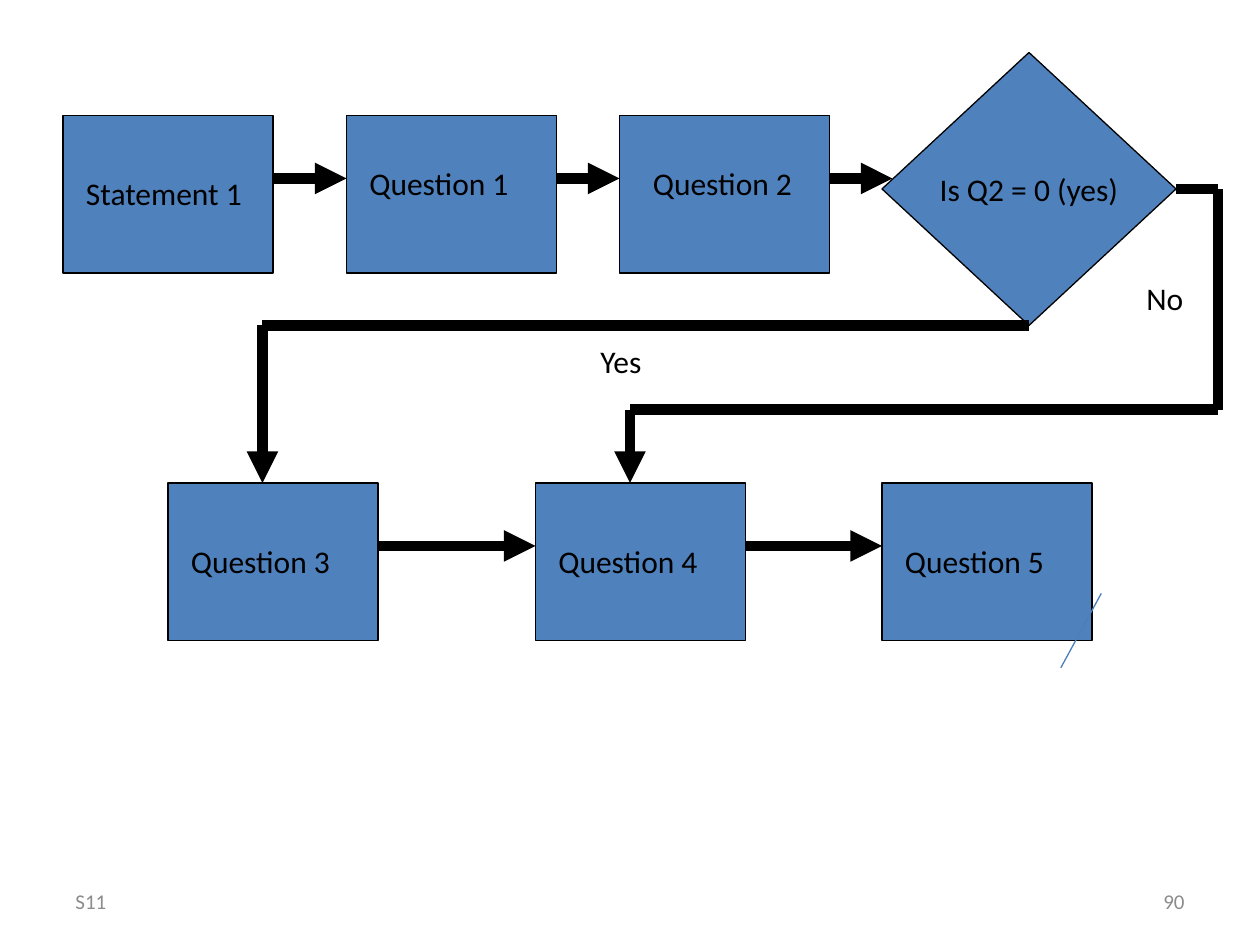
"""Build the survey skip-logic flow chart slide."""
from lxml import etree
from pptx import Presentation
from pptx.dml.color import RGBColor
from pptx.enum.shapes import MSO_CONNECTOR, MSO_SHAPE
from pptx.enum.text import MSO_ANCHOR, PP_ALIGN
from pptx.oxml.ns import qn
from pptx.util import Pt

RECT, DIAMOND = MSO_SHAPE.RECTANGLE, MSO_SHAPE.DIAMOND
LINE = MSO_CONNECTOR.STRAIGHT
LEFT, MID, RIGHT = PP_ALIGN.LEFT, PP_ALIGN.CENTER, PP_ALIGN.RIGHT
MIDDLE, TOP = MSO_ANCHOR.MIDDLE, MSO_ANCHOR.TOP


def paint(target, color):
    target.rgb = RGBColor.from_string(color)


def write(shape, text, size=18, color="000000", align=LEFT, anchor=TOP, wrap=False):
    frame = shape.text_frame
    frame.word_wrap = wrap
    frame.vertical_anchor = anchor
    para = frame.paragraphs[0]
    para.alignment = align
    run = para.add_run()
    run.text = text
    run.font.name = "Calibri"
    run.font.size = Pt(size)
    paint(run.font.color, color)


deck = Presentation()
deck.slide_width, deck.slide_height = Pt(720), Pt(540)
slide = deck.slides.add_slide(deck.slide_layouts[6])
shapes = slide.shapes

row1, row2, wide, high = 66, 276, 120, 90
nodes = [(RECT, x, row1, wide, high) for x in (36, 198, 354)]
nodes += [(RECT, x, row2, wide, high) for x in (96, 306, 504)]
nodes.append((DIAMOND, 504, 30, 168, 156))
for kind, *place in nodes:
    node = shapes.add_shape(kind, *map(Pt, place))
    node.shadow.inherit = False
    node.fill.solid()
    paint(node.fill.fore_color, "4F81BD")
    paint(node.line.color, "000000")
    node.line.width = Pt(0.75)
write(node, "Is Q2 = 0 (yes)", align=MID, anchor=MIDDLE)

labels = [
    ("Statement 1", 42, 96, 112),
    ("Question 1", 204, 90, 101.5),
    ("Question 2", 366, 90, 101.5),
    ("Question 3", 102, 306, 101.5),
    ("Question 4", 312, 306, 101.5),
    ("Question 5", 510, 306, 101.5),
    ("Yes", 336, 192, 45),
    ("No", 648, 156, 37.5),
]
for text, x, y, span in labels:
    write(shapes.add_textbox(Pt(x), Pt(y), Pt(span), Pt(29)), text)

arrows = [
    (156, 102, 198, 102), (318, 102, 354, 102), (474, 102, 510, 102),
    (216, 312, 306, 312), (426, 312, 504, 312),
    (150, 186, 150, row2), (360, 234, 360, row2),
]
plain = [
    (150, 186, 588, 186), (672, 108, 696, 108),
    (696, 108, 696, 234), (360, 234, 696, 234),
]
for ends in arrows + plain:
    link = shapes.add_connector(LINE, *map(Pt, ends))
    paint(link.line.color, "000000")
    link.line.width = Pt(6)
    if ends in arrows:
        outline = link.line._get_or_add_ln()
        etree.SubElement(outline, qn("a:tailEnd"), type="triangle")
    etree.SubElement(link._element.spPr, qn("a:effectLst"))

pen = shapes.build_freeform(Pt(606.2), Pt(381.6))
pen.add_line_segments([(Pt(629.3), Pt(339.1))], close=False)
stroke = pen.convert_to_shape()
stroke.shadow.inherit = False
stroke.fill.background()
paint(stroke.line.color, "4B7EBC")
stroke.line.width = Pt(0.75)

for text, x, align in (("S11", 36, LEFT), ("90", 516, RIGHT)):
    foot = shapes.add_textbox(Pt(x), Pt(500.5), Pt(168), Pt(28.75))
    write(foot, text, 12, "8C8C8C", align, MIDDLE, True)

deck.save("out.pptx")
